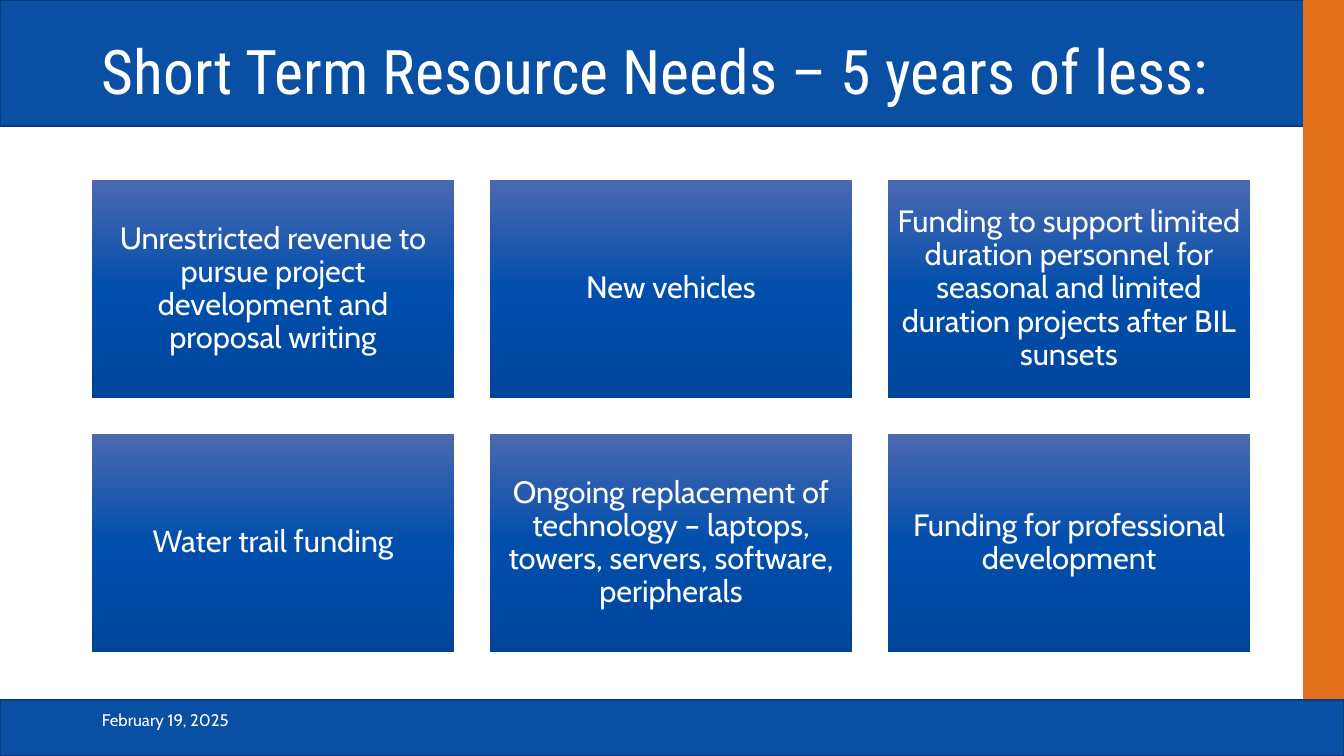
from copy import deepcopy

from pptx import Presentation
from pptx.dml.color import RGBColor
from pptx.enum.shapes import MSO_SHAPE
from pptx.enum.text import MSO_ANCHOR, PP_ALIGN
from pptx.oxml.ns import qn
from pptx.util import Emu, Pt

RECTANGLE = MSO_SHAPE.RECTANGLE
MIDDLE = MSO_ANCHOR.MIDDLE
LEFT = PP_ALIGN.LEFT
CENTER = PP_ALIGN.CENTER

WHITE = RGBColor(0xFF, 0xFF, 0xFF)
BLUE = RGBColor(0x09, 0x4F, 0xA4)
DARK_BLUE = RGBColor(0x07, 0x3A, 0x79)
ORANGE = RGBColor(0xE0, 0x70, 0x1C)
CARD_TOP = RGBColor(0x4B, 0x68, 0xB0)
CARD_MIDDLE = RGBColor(0x01, 0x4E, 0xAC)
CARD_BOTTOM = RGBColor(0x00, 0x45, 0x9A)

SLIDE_WIDTH, SLIDE_HEIGHT = 1344, 756
MARGIN = 92
CARD_WIDTH, CARD_HEIGHT, CARD_GAP = 362, 218, 36
CARDS_TOP = 180
COLUMNS = 3

NEEDS = [
    "Unrestricted revenue to pursue project development and proposal writing",
    "New vehicles",
    "Funding to support limited duration personnel for seasonal and limited "
    "duration projects after BIL sunsets",
    "Water trail funding",
    "Ongoing replacement of technology – laptops, towers, servers, software, peripherals",
    "Funding for professional development",
]


def px(length):
    return Emu(round(length * 914400 / 100.8))


class SlideBuilder:
    heading_font = "Roboto Condensed"
    body_font = "Cabin"

    def __init__(self, presentation):
        self.slide = presentation.slides.add_slide(presentation.slide_layouts[6])

    def rectangle(self, left, top, width, height):
        shape = self.slide.shapes.add_shape(
            RECTANGLE, px(left), px(top), px(width), px(height))
        shape.shadow.inherit = False
        shape.line.fill.background()
        return shape

    def bar(self, left, top, width, height, color, outline=None):
        shape = self.rectangle(left, top, width, height)
        shape.fill.solid()
        shape.fill.fore_color.rgb = color
        if outline is not None:
            shape.line.color.rgb = outline
            shape.line.width = Pt(1)

    def set_text(self, shape, text, size, font, align=LEFT, spacing=1.0, after=0):
        frame = shape.text_frame
        frame.text = text
        frame.word_wrap = True
        frame.vertical_anchor = MIDDLE
        paragraph = frame.paragraphs[0]
        paragraph.alignment = align
        paragraph.line_spacing = spacing
        paragraph.space_after = Pt(after)
        for run in paragraph.runs:
            run.font.name = font
            run.font.size = Pt(size)
            run.font.color.rgb = WHITE

    def label(self, left, top, width, height, text, size, font, **style):
        box = self.slide.shapes.add_textbox(px(left), px(top), px(width), px(height))
        self.set_text(box, text, size, font, **style)

    def card(self, left, top, text):
        shape = self.rectangle(left, top, CARD_WIDTH, CARD_HEIGHT)
        shape.fill.gradient()
        shape.fill.gradient_angle = 270
        first_stop = next(shape._element.spPr.iter(qn("a:gs")))
        first_stop.addnext(deepcopy(first_stop))
        colors = (CARD_TOP, CARD_MIDDLE, CARD_BOTTOM)
        for index, (stop, color) in enumerate(zip(shape.fill.gradient_stops, colors)):
            stop.position = index / 2
            stop.color.rgb = color
        frame = shape.text_frame
        frame.margin_left = frame.margin_right = px(9)
        frame.margin_top = frame.margin_bottom = px(9)
        self.set_text(shape, text, 22, self.body_font, align=CENTER, spacing=0.9, after=7.7)


def main():
    presentation = Presentation()
    presentation.slide_width = px(SLIDE_WIDTH)
    presentation.slide_height = px(SLIDE_HEIGHT)
    builder = SlideBuilder(presentation)

    builder.bar(0, 0, SLIDE_WIDTH, 126, BLUE, DARK_BLUE)
    builder.bar(1303, 0, 41, 742, ORANGE)
    builder.bar(0, 700, SLIDE_WIDTH, 56, BLUE, DARK_BLUE)
    builder.label(MARGIN, 24, 1159, 102, "Short Term Resource Needs – 5 years of less:",
                  44, builder.heading_font, spacing=0.9)
    builder.label(MARGIN, 700, 302, 40, "February 19, 2025",
                  12, builder.body_font, after=6)

    for index, need in enumerate(NEEDS):
        row, column = divmod(index, COLUMNS)
        builder.card(MARGIN + column * (CARD_WIDTH + CARD_GAP),
                     CARDS_TOP + row * (CARD_HEIGHT + CARD_GAP), need)

    presentation.save("out.pptx")


if __name__ == "__main__":
    main()
